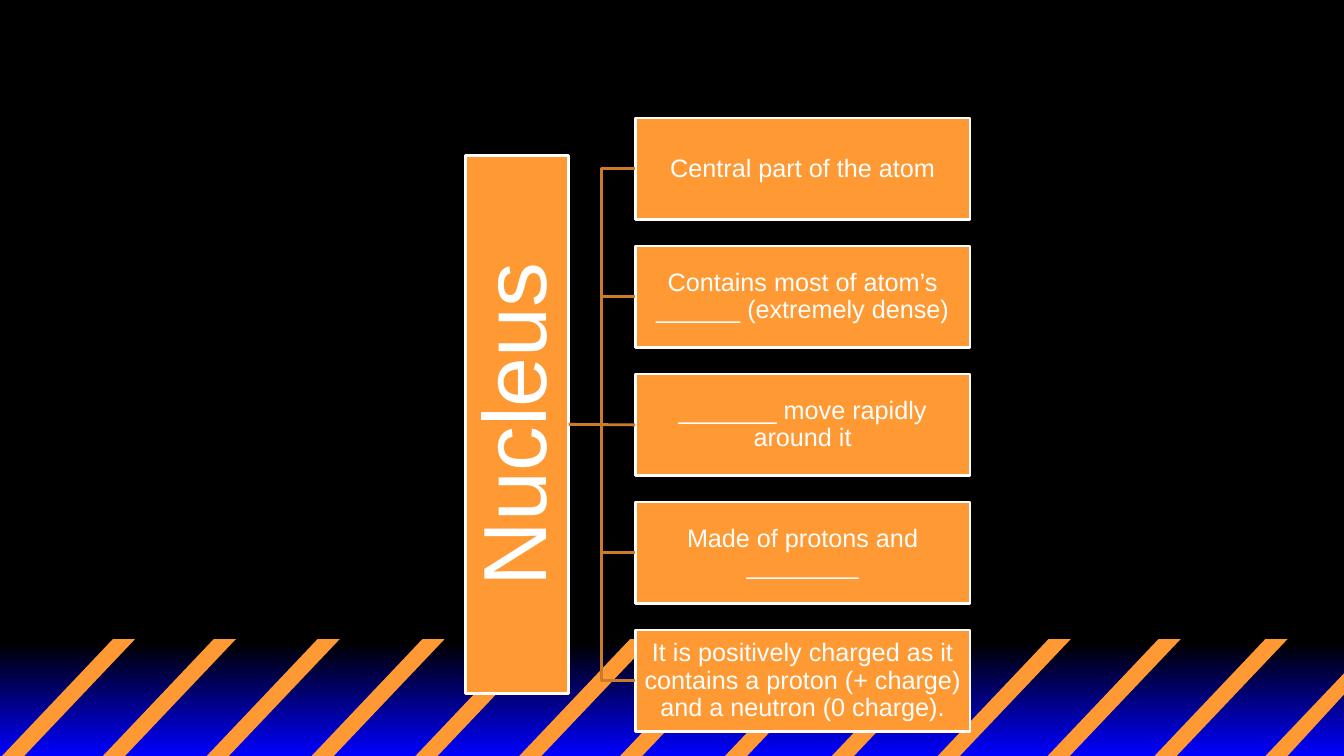
"""Build a slide with a horizontal hierarchy about the atomic nucleus."""
from lxml import etree
from pptx import Presentation
from pptx import util as u
from pptx.dml.color import RGBColor
from pptx.enum import shapes, text
from pptx.oxml.ns import qn

PX = 9144
BLACK = RGBColor(0x00, 0x00, 0x00)
BLUE = RGBColor(0x00, 0x00, 0xFF)
ORANGE = RGBColor(0xFF, 0x99, 0x33)
BROWN = RGBColor(0xCC, 0x7B, 0x29)
WHITE = RGBColor(0xFF, 0xFF, 0xFF)

WIDTH, HEIGHT = 1333, 750
STRIPE_TOP = 634
STRIPE_LEFTS = [2, 102, 205, 309, 412, 515, 615, 719, 825, 930, 1039, 1145]
FACTS = [
    "Central part of the atom",
    "Contains most of atom’s ______ (extremely dense)",
    "_______ move rapidly around it",
    "Made of protons and ________",
    "It is positively charged as it contains a proton (+ charge) "
    "and a neutron (0 charge).",
]
FACT_LEFT, FACT_TOP, FACT_STEP = 630, 117, 127


def add_stripe(page, points):
    outline = page.shapes.build_freeform(*points[0], scale=PX)
    outline.add_line_segments(points[1:], close=True)
    stripe = outline.convert_to_shape()
    stripe.shadow.inherit = False
    stripe.fill.solid()
    stripe.fill.fore_color.rgb = ORANGE
    stripe.line.fill.background()


def add_box(page, left, top, width, height, words, size, inset):
    box = page.shapes.add_shape(shapes.MSO_SHAPE.RECTANGLE,
                                left * PX, top * PX, width * PX, height * PX)
    box.shadow.inherit = False
    box.fill.solid()
    box.fill.fore_color.rgb = ORANGE
    box.line.color.rgb = WHITE
    box.line.width = u.Pt(2)
    frame = box.text_frame
    frame.word_wrap = True
    frame.vertical_anchor = text.MSO_ANCHOR.MIDDLE
    frame.margin_left = frame.margin_right = inset * PX
    frame.margin_top = frame.margin_bottom = inset * PX
    para = frame.paragraphs[0]
    para.alignment = text.PP_ALIGN.CENTER
    para.line_spacing = 0.9
    span = para.add_run()
    span.text = words
    span.font.name = "Arial"
    span.font.size = u.Pt(size)
    span.font.color.rgb = WHITE
    return box


deck = Presentation()
deck.slide_width = WIDTH * PX
deck.slide_height = HEIGHT * PX
page = deck.slides.add_slide(deck.slide_layouts[6])
page.background.fill.solid()
page.background.fill.fore_color.rgb = BLACK

floor = page.shapes.add_shape(shapes.MSO_SHAPE.RECTANGLE,
                              0, 638 * PX, WIDTH * PX, 112 * PX)
floor.shadow.inherit = False
floor.line.fill.background()
floor.fill.gradient()
floor.fill.gradient_angle = 270
for stop, colour in zip(floor.fill.gradient_stops, (BLACK, BLUE)):
    stop.color.rgb = colour

for left in STRIPE_LEFTS:
    add_stripe(page, [(left, HEIGHT), (left + 110, STRIPE_TOP),
                      (left + 132, STRIPE_TOP), (left + 22, HEIGHT)])
add_stripe(page, [(1255, HEIGHT), (WIDTH, 668), (WIDTH, 689), (1277, HEIGHT)])

nucleus = add_box(page, 462, 154, 102, 534, "Nucleus", 64, 4)
nucleus.text_frame._txBody.bodyPr.set("vert", "vert270")

for row, words in enumerate(FACTS):
    fact = add_box(page, FACT_LEFT, FACT_TOP + row * FACT_STEP, 332, 101,
                   words, 18, 1)
    is_middle = row == len(FACTS) // 2
    kind = shapes.MSO_CONNECTOR.STRAIGHT if is_middle else shapes.MSO_CONNECTOR.ELBOW
    branch = page.shapes.add_connector(kind, 0, 0, 0, 0)
    branch.begin_connect(nucleus, 3)
    branch.end_connect(fact, 1)
    branch.line.color.rgb = BROWN
    branch.line.width = u.Pt(2)
    etree.SubElement(branch._element.spPr, qn("a:effectLst"))

deck.save("out.pptx")
